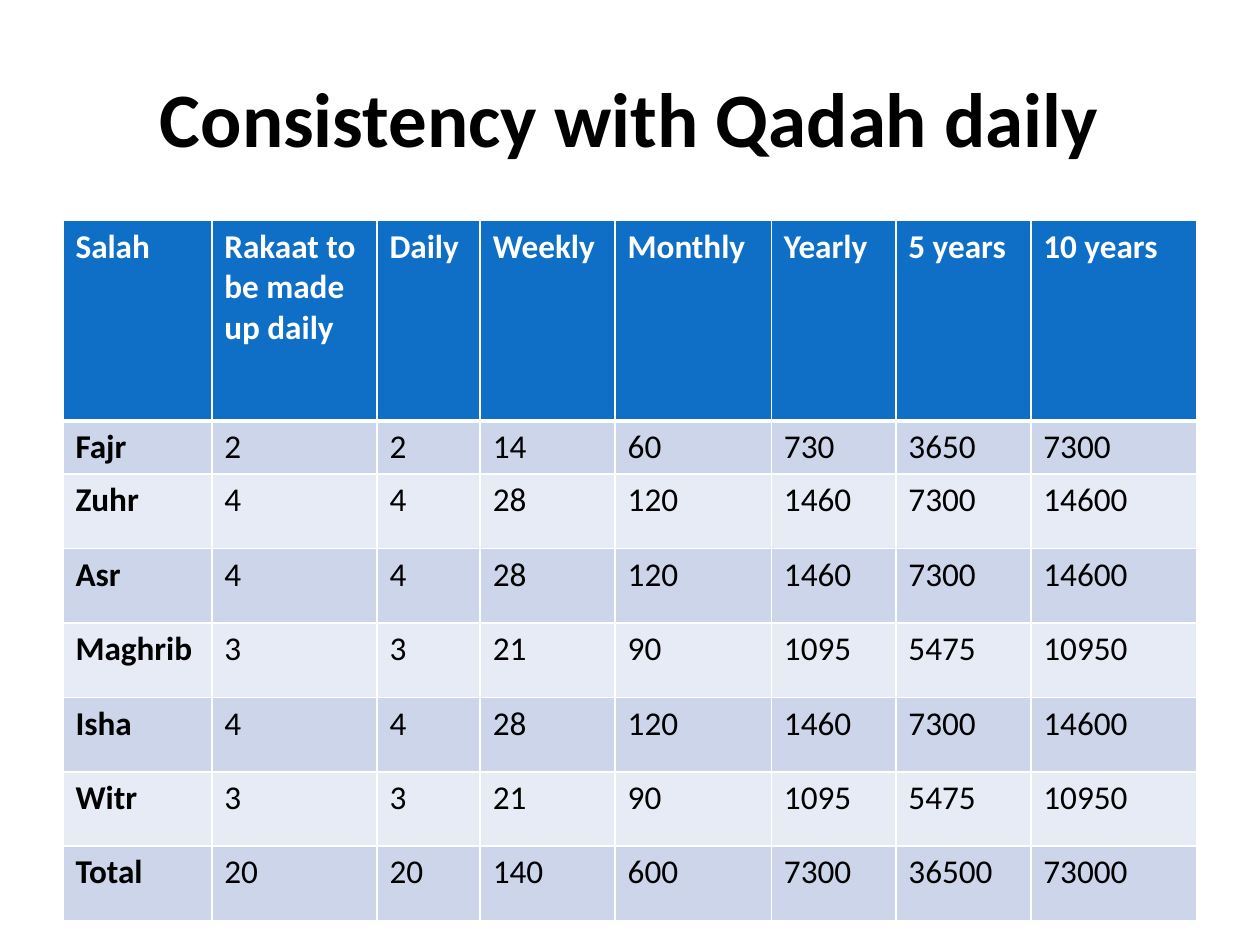
"""Build a slide with a table of prayers made up daily and their totals over time."""
import pptx
import pptx.dml.color
import pptx.enum.text
import pptx.oxml.ns
import pptx.util
from lxml import etree
from pptx.util import Cm

BLACK = pptx.dml.color.RGBColor(0x00, 0x00, 0x00)
WHITE = pptx.dml.color.RGBColor(0xFF, 0xFF, 0xFF)
HEADER_BLUE = pptx.dml.color.RGBColor(0x0F, 0x6F, 0xC6)
BAND_DARK = pptx.dml.color.RGBColor(0xCC, 0xD5, 0xEA)
BAND_LIGHT = pptx.dml.color.RGBColor(0xE7, 0xEB, 0xF5)

HEADERS = ["Salah", "Rakaat to be made up daily", "Daily", "Weekly",
           "Monthly", "Yearly", "5 years", "10 years"]
RAKAAT = {"Fajr": 2, "Zuhr": 4, "Asr": 4, "Maghrib": 3, "Isha": 4, "Witr": 3}
DAYS = [1, 1, 7, 30, 365, 5 * 365, 10 * 365]
COLUMN_WIDTHS = [3, 3.33, 2.08, 2.72, 3.15, 2.51, 2.72, 3.35]
ROW_HEIGHTS = [4.04, 0.89] + [1.5] * 6


def write_text(frame, text, size, color=BLACK, bold=False,
               align=pptx.enum.text.PP_ALIGN.LEFT):
    paragraph = frame.paragraphs[0]
    paragraph.alignment = align
    run = paragraph.add_run()
    run.text = text
    run.font.name = "Calibri"
    run.font.size = pptx.util.Pt(size)
    run.font.bold = bold
    run.font.color.rgb = color


def add_border(cell, side, width):
    properties = cell._tc.get_or_add_tcPr()
    line = etree.SubElement(properties, pptx.oxml.ns.qn(f"a:ln{side}"),
                            w=str(pptx.util.Pt(width)))
    fill = etree.SubElement(line, pptx.oxml.ns.qn("a:solidFill"))
    etree.SubElement(fill, pptx.oxml.ns.qn("a:srgbClr"), val=str(WHITE))


presentation = pptx.Presentation()
presentation.slide_width = Cm(25.4)
presentation.slide_height = Cm(19.05)
slide = presentation.slides.add_slide(presentation.slide_layouts[5])

title = slide.shapes.title
title.left, title.top, title.width, title.height = Cm(1.27), Cm(0.76), Cm(22.86), Cm(3.18)
title.text_frame.vertical_anchor = pptx.enum.text.MSO_ANCHOR.MIDDLE
write_text(title.text_frame, "Consistency with Qadah daily", 44, bold=True,
           align=pptx.enum.text.PP_ALIGN.CENTER)

totals = {**RAKAAT, "Total": sum(RAKAAT.values())}
rows = [HEADERS] + [[name] + [str(count * days) for days in DAYS]
                    for name, count in totals.items()]

table = slide.shapes.add_table(len(rows), len(HEADERS), Cm(1.27), Cm(4.45),
                               Cm(sum(COLUMN_WIDTHS)), Cm(sum(ROW_HEIGHTS))).table
for column, width in zip(table.columns, COLUMN_WIDTHS):
    column.width = Cm(width)

for row_index, values in enumerate(rows):
    table.rows[row_index].height = Cm(ROW_HEIGHTS[row_index])
    is_header = row_index == 0
    band = BAND_DARK if row_index % 2 else BAND_LIGHT
    for column_index, value in enumerate(values):
        cell = table.cell(row_index, column_index)
        add_border(cell, "L", 1)
        add_border(cell, "R", 1)
        add_border(cell, "T", 3 if row_index == 1 else 1)
        add_border(cell, "B", 3 if is_header else 1)
        cell.fill.solid()
        cell.fill.fore_color.rgb = HEADER_BLUE if is_header else band
        write_text(cell.text_frame, value, 19, color=WHITE if is_header else BLACK,
                   bold=is_header or column_index == 0)

presentation.save("out.pptx")
